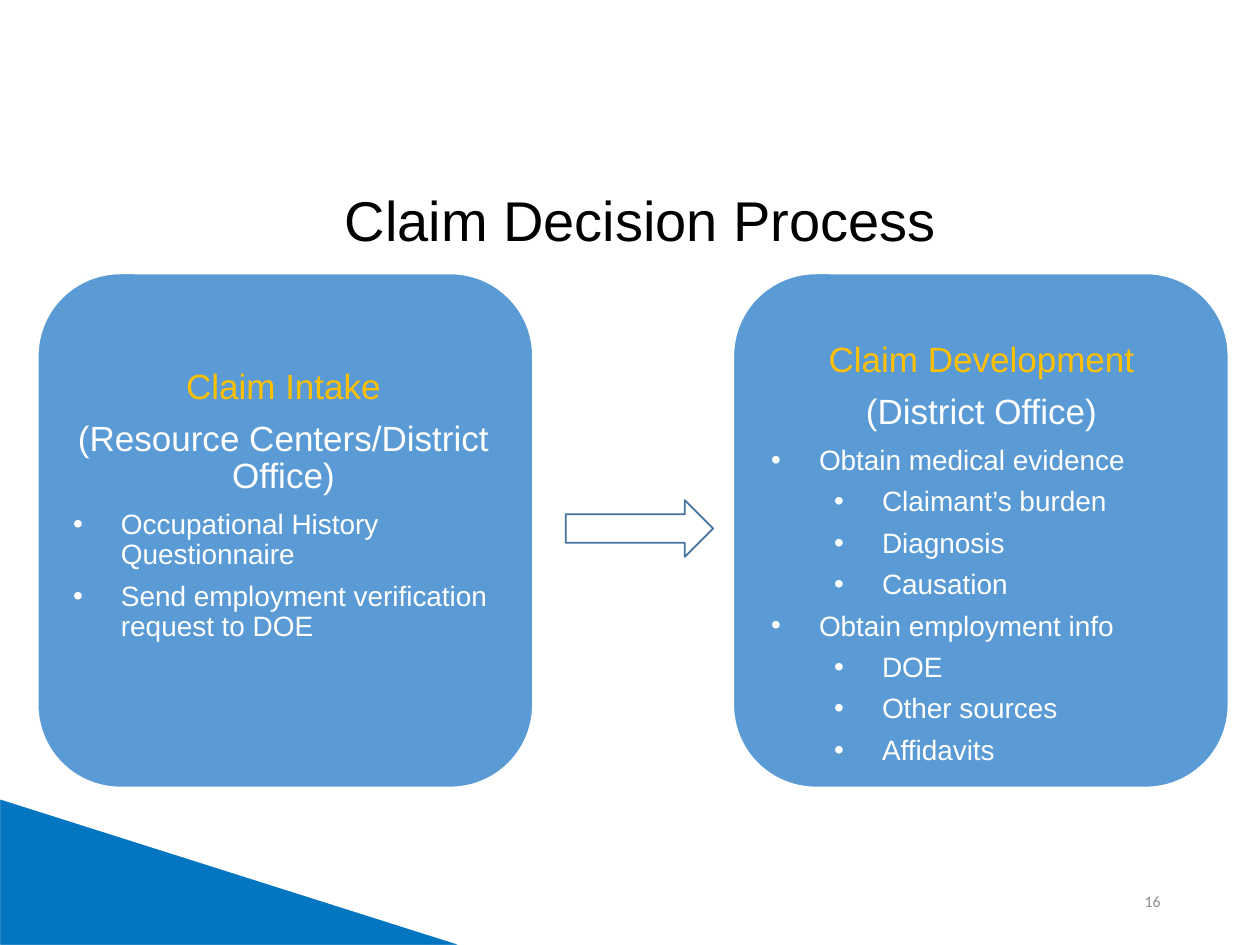
from lxml.etree import SubElement
from pptx import Presentation
from pptx.dml.color import RGBColor as RGB
from pptx.enum.shapes import MSO_SHAPE as SHAPE
from pptx.enum.text import MSO_ANCHOR as ANCHOR, PP_ALIGN as ALIGN
from pptx.oxml.ns import qn
from pptx.util import Inches, Pt

WHITE = RGB(0xFF, 0xFF, 0xFF)
BLACK = RGB(0x00, 0x00, 0x00)
GRAY = RGB(0x8C, 0x8C, 0x8C)
GOLD = RGB(0xFF, 0xC0, 0x00)
BLUE = RGB(0x5B, 0x9B, 0xD5)
DEEP = RGB(0x04, 0x75, 0xC0)
EDGE = RGB(0x43, 0x73, 0x9E)

deck = Presentation()
deck.slide_width, deck.slide_height = Inches(10), Inches(7.5)
slide = deck.slides.add_slide(deck.slide_layouts[6])


def add_form(kind, left, top, width, height, fill, line, weight=1):
    form = slide.shapes.add_shape(
        kind, Inches(left), Inches(top), Inches(width), Inches(height))
    form.shadow.inherit = False
    form.fill.solid()
    form.fill.fore_color.rgb = fill
    form.line.color.rgb = line
    form.line.width = Pt(weight)


def add_text(para, text, size=20, color=WHITE, font="Arial",
             align=ALIGN.CENTER, level=None, after=0, lead=None):
    para.alignment = align
    para.space_after = Pt(after)
    if lead:
        para.line_spacing = lead
    if level is not None:
        para.level = level
        props = para._p.get_or_add_pPr()
        props.set("marL", str(Inches(0.38 + 0.5 * level)))
        props.set("indent", str(Inches(-0.38)))
        SubElement(props, qn("a:buFont"), typeface="Arial")
        SubElement(props, qn("a:buChar"), char="•")
    run = para.add_run()
    run.text = text
    run.font.size = Pt(size)
    run.font.name = font
    run.font.color.rgb = color


add_form(SHAPE.RIGHT_TRIANGLE, -0.01, 6.33, 3.72, 1.18, DEEP, WHITE, 1.5)

labels = [
    ("16", (7.06, 6.95, 2.25, 0.4), ANCHOR.MIDDLE,
     dict(size=9, color=GRAY, font="Calibri", align=ALIGN.RIGHT)),
    ("Claim Decision Process", (0.92, 1.42, 8.33, 0.64), ANCHOR.TOP,
     dict(size=32, color=BLACK)),
]
for text, spot, anchor, style in labels:
    box = slide.shapes.add_textbox(*map(Inches, spot))
    frame = box.text_frame
    frame.word_wrap = True
    frame.vertical_anchor = anchor
    add_text(frame.paragraphs[0], text, **style)

steps = [
    (0.3, (0.41, 2.85, 3.68, 2.4), "Claim Intake",
     "(Resource Centers/District Office)",
     [(0, "Occupational History Questionnaire"),
      (0, "Send employment verification request to DOE")]),
    (5.82, (5.95, 2.64, 3.68, 3.5), "Claim Development",
     "(District Office)",
     [(0, "Obtain medical evidence"),
      (1, "Claimant’s burden"),
      (1, "Diagnosis"),
      (1, "Causation"),
      (0, "Obtain employment info"),
      (1, "DOE"),
      (1, "Other sources"),
      (1, "Affidavits")]),
]
for left, spot, title, office, tasks in steps:
    add_form(SHAPE.ROUNDED_RECTANGLE, left, 2.17, 3.93, 4.08, BLUE, WHITE)
    box = slide.shapes.add_textbox(*map(Inches, spot))
    frame = box.text_frame
    frame.word_wrap = True
    frame.margin_left = frame.margin_right = Inches(0.17)
    frame.margin_top = frame.margin_bottom = Inches(0.08)
    add_text(frame.paragraphs[0], title, color=GOLD, after=8, lead=0.9)
    add_text(frame.add_paragraph(), office, after=8, lead=0.9)
    for level, task in tasks:
        add_text(frame.add_paragraph(), task, size=16, align=ALIGN.LEFT,
                 level=level, after=6.4, lead=0.9)

add_form(SHAPE.RIGHT_ARROW, 4.49, 3.97, 1.17, 0.45, WHITE, EDGE)

deck.save("out.pptx")
